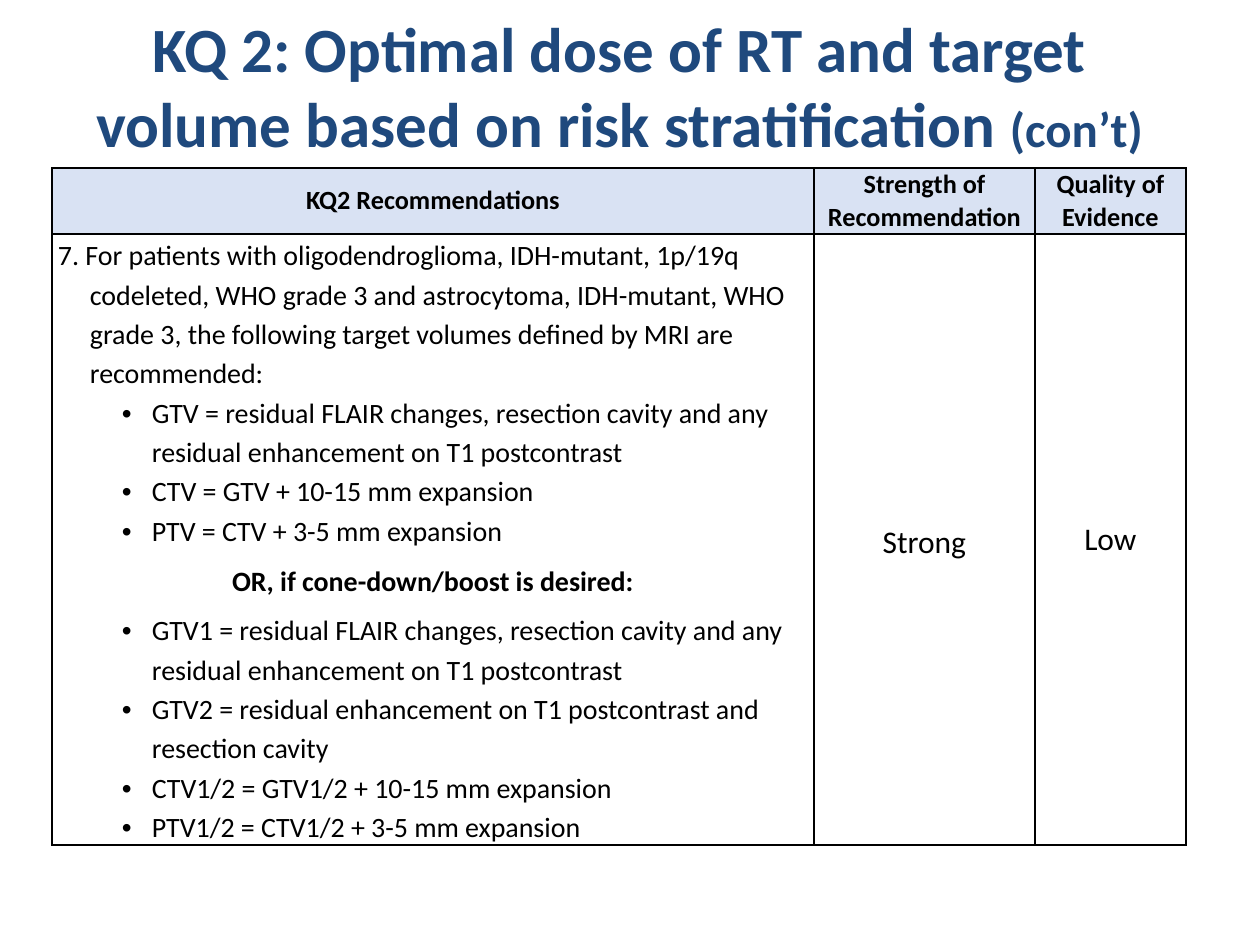
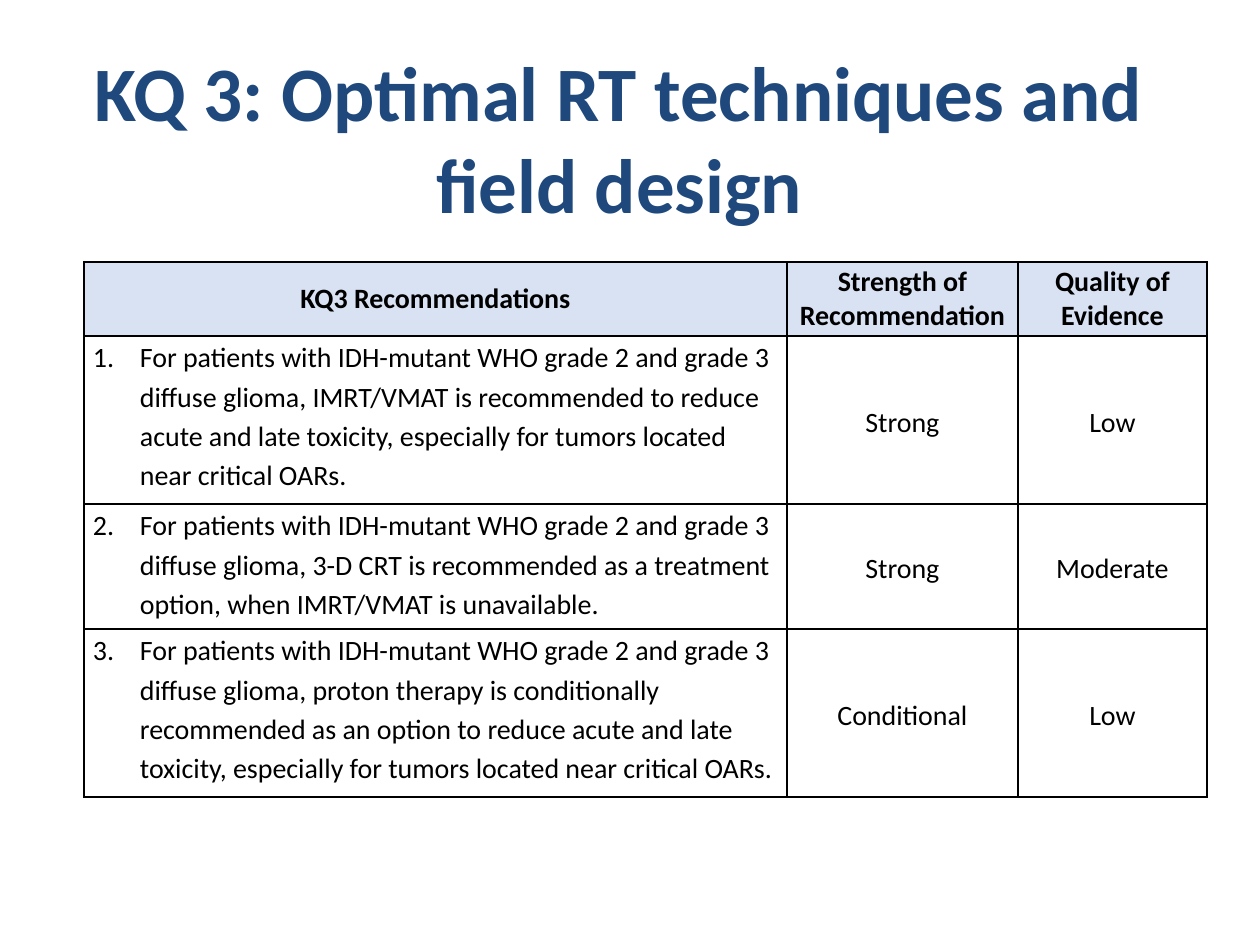
from dataclasses import dataclass

from lxml import etree
from pptx import Presentation
from pptx.dml.color import RGBColor
from pptx.enum.text import MSO_ANCHOR, PP_ALIGN
from pptx.oxml.ns import qn
from pptx.util import Emu, Pt

LEFT, CENTER = PP_ALIGN.LEFT, PP_ALIGN.CENTER
TOP, MIDDLE = MSO_ANCHOR.TOP, MSO_ANCHOR.MIDDLE

FONT = "Calibri"
NAVY, BLACK, WHITE, PALE = "1F497D", "000000", "FFFFFF", "D9E2F3"
SIDES = ("a:lnL", "a:lnR", "a:lnT", "a:lnB")
PX_PER_INCH = 126
LOOSE = 1.15


@dataclass
class Run:
    text: str
    size: int
    bold: bool = False
    color: str = BLACK


@dataclass
class Para:
    run: Run
    align: PP_ALIGN = LEFT
    lines: float | None = LOOSE
    left: int = 0
    hang: int = 0
    mark: str = ""
    number: int = 0
    gap: int = 0


@dataclass
class Cell:
    paras: list[Para]
    inset: int
    anchor: MSO_ANCHOR = MIDDLE
    fill: str = WHITE


@dataclass
class Grid:
    left: int
    top: int
    cols: list[int]
    rows: list[int]
    cells: list[list[Cell]]


def px(count: int) -> Emu:
    return Emu(round(count * 914400 / PX_PER_INCH))


def paint(color: str) -> RGBColor:
    return RGBColor.from_string(color)


def add_run(para, run: Run) -> None:
    part = para.add_run()
    part.text = run.text
    part.font.name = FONT
    part.font.size = Pt(run.size)
    part.font.bold = run.bold
    part.font.color.rgb = paint(run.color)


def add_title(slide, top: int, runs: list[Run]) -> None:
    box = slide.shapes.add_textbox(px(42), px(top), px(1155), px(158))
    frame = box.text_frame
    frame.word_wrap = True
    frame.vertical_anchor = TOP
    para = frame.paragraphs[0]
    para.alignment = CENTER
    for run in runs:
        add_run(para, run)


def set_para(para, spec_: Para) -> None:
    para.alignment = spec_.align
    if spec_.lines:
        para.line_spacing = spec_.lines
    if spec_.gap:
        para.space_before = para.space_after = Pt(spec_.gap)
    props = para._p.get_or_add_pPr()
    props.set("marL", str(px(spec_.left)))
    props.set("indent", str(px(-spec_.hang)))
    if spec_.mark:
        etree.SubElement(props, qn("a:buFont"), typeface="Arial")
        etree.SubElement(props, qn("a:buChar"), char=spec_.mark)
    elif spec_.number:
        etree.SubElement(props, qn("a:buFont"), typeface=FONT)
        etree.SubElement(props, qn("a:buAutoNum"), type="arabicPeriod",
                         startAt=str(spec_.number))
    add_run(para, spec_.run)


def add_rules(cell) -> None:
    """Draw a black 1 pt line on each side, ahead of the cell fill."""
    props = cell._tc.get_or_add_tcPr()
    for place, side in enumerate(SIDES):
        line = etree.Element(qn(side), w=str(Pt(1)))
        fill = etree.SubElement(line, qn("a:solidFill"))
        etree.SubElement(fill, qn("a:srgbClr"), val=BLACK)
        props.insert(place, line)


def set_cell(cell, data: Cell) -> None:
    cell.fill.solid()
    cell.fill.fore_color.rgb = paint(data.fill)
    cell.vertical_anchor = data.anchor
    cell.margin_left = cell.margin_right = px(data.inset)
    cell.margin_top = cell.margin_bottom = 0
    add_rules(cell)
    frame = cell.text_frame
    for place, item in enumerate(data.paras):
        para = frame.add_paragraph() if place else frame.paragraphs[0]
        set_para(para, item)


def add_grid(slide, grid: Grid) -> None:
    frame = slide.shapes.add_table(
        len(grid.rows), len(grid.cols), px(grid.left), px(grid.top),
        px(sum(grid.cols)), px(sum(grid.rows)))
    table = frame.table
    table.first_row = table.horz_banding = False
    for col, width in zip(table.columns, grid.cols):
        col.width = px(width)
    for row, height, data in zip(table.rows, grid.rows, grid.cells):
        row.height = px(height)
        for cell, item in zip(row.cells, data):
            set_cell(cell, item)


def head_row(topic: str, size: int) -> list[Cell]:
    heads = [[f"{topic} Recommendations"],
             ["Strength of", "Recommendation"],
             ["Quality of", "Evidence"]]
    return [Cell([Para(Run(text, size, True), CENTER, None) for text in lines],
                 9, fill=PALE) for lines in heads]


def grade(text: str, size: int, inset: int, lines: float | None = LOOSE) -> Cell:
    """Make a centred cell that rates a recommendation."""
    return Cell([Para(Run(text, size), CENTER, lines)], inset)


def dots(texts: list[str]) -> list[Para]:
    return [Para(Run(text, 16), left=94, hang=30, mark="•") for text in texts]


def dose_grid() -> Grid:
    intro = Para(Run(
        "7. For patients with oligodendroglioma, IDH-mutant, 1p/19q codeleted, "
        "WHO grade 3 and astrocytoma, IDH-mutant, WHO grade 3, the following "
        "target volumes defined by MRI are recommended:", 16), left=32, hang=32)
    plain = dots([
        "GTV = residual FLAIR changes, resection cavity and any residual "
        "enhancement on T1 postcontrast",
        "CTV = GTV + 10-15 mm expansion",
        "PTV = CTV + 3-5 mm expansion",
    ])
    choice = Para(Run("OR, if cone-down/boost is desired:", 16, True), CENTER, gap=6)
    boost = dots([
        "GTV1 = residual FLAIR changes, resection cavity and any residual "
        "enhancement on T1 postcontrast",
        "GTV2 = residual enhancement on T1 postcontrast and resection cavity",
        "CTV1/2 = GTV1/2 + 10-15 mm expansion",
        "PTV1/2 = CTV1/2 + 3-5 mm expansion",
    ])
    body = [Cell([intro, *plain, choice, *boost], 6, TOP),
            grade("Strong", 18, 6), grade("Low", 18, 6, None)]
    return Grid(52, 168, [762, 221, 151], [66, 611], [head_row("KQ2", 15), body])


def field_grid() -> Grid:
    start = "For patients with IDH-mutant WHO grade 2 and grade 3 diffuse glioma, "
    advice = [
        ("IMRT/VMAT is recommended to reduce acute and late toxicity, especially "
         "for tumors located near critical OARs.", "Strong", "Low"),
        ("3-D CRT is recommended as a treatment option, when IMRT/VMAT is "
         "unavailable.", "Strong", "Moderate"),
        ("proton therapy is conditionally recommended as an option to reduce "
         "acute and late toxicity, especially for tumors located near critical "
         "OARs.", "Conditional", "Low"),
    ]
    cells = [head_row("KQ3", 16)]
    for number, (text, strength, proof) in enumerate(advice, 1):
        para = Para(Run(start + text, 16), left=47, hang=47, number=number)
        cells.append([Cell([para], 9, TOP),
                      grade(strength, 16, 9), grade(proof, 16, 9)])
    return Grid(84, 262, [703, 231, 189], [74, 168, 125, 168], cells)


def main() -> None:
    deck = Presentation()
    deck.slide_width, deck.slide_height = px(1260), px(945)
    blank = deck.slide_layouts[6]

    dose = deck.slides.add_slide(blank)
    add_title(dose, 3, [
        Run("KQ 2: Optimal dose of RT and target volume based on risk "
            "stratification ", 36, True, NAVY),
        Run("(con’t)", 28, True, NAVY),
    ])
    add_grid(dose, dose_grid())

    field = deck.slides.add_slide(blank)
    add_title(field, 38, [
        Run("KQ 3: Optimal RT techniques and field design", 44, True, NAVY)])
    add_grid(field, field_grid())

    deck.save("out.pptx")


if __name__ == "__main__":
    main()
